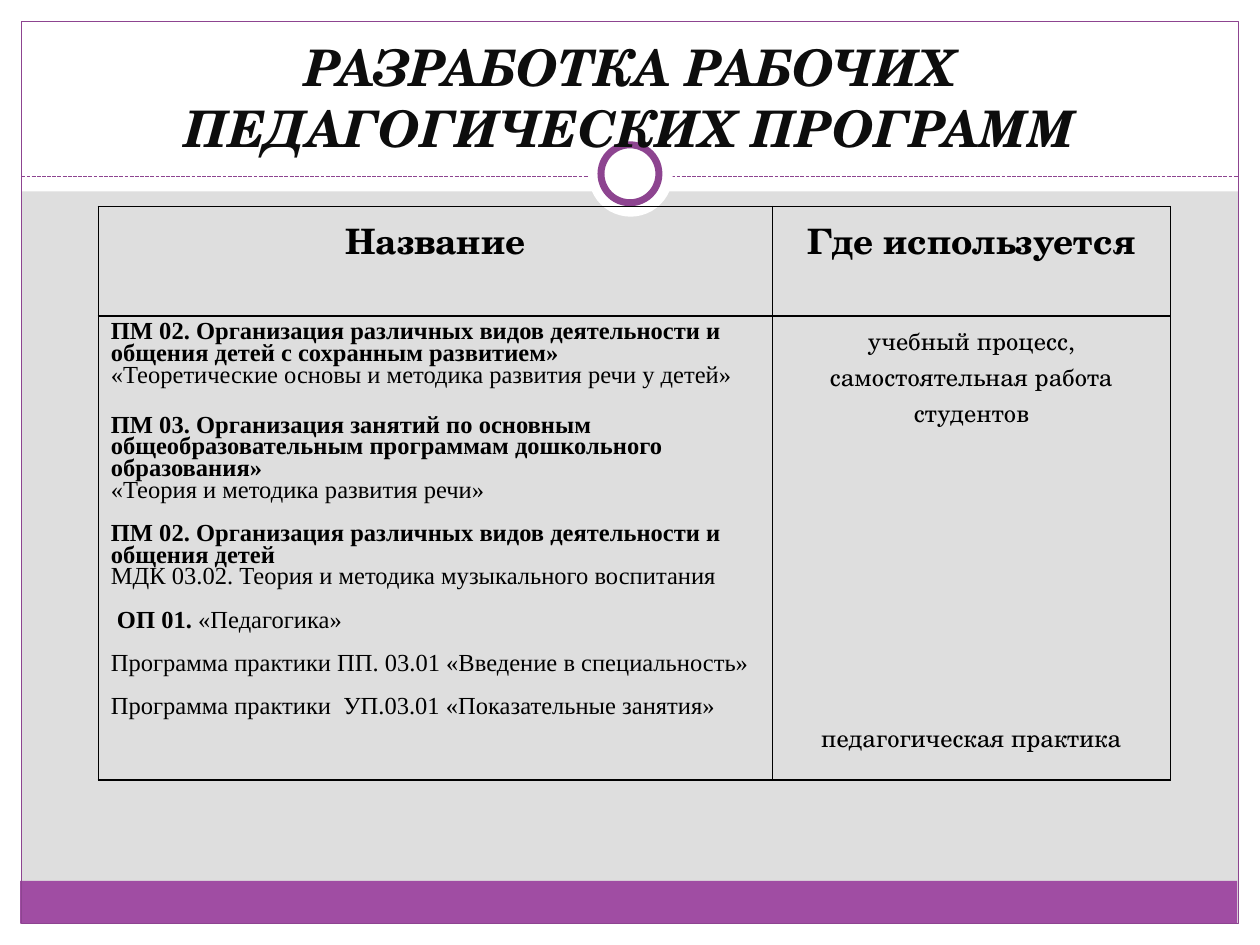
"""Build the slide on developing pedagogical work programmes."""
from lxml import etree
from pptx import Presentation, util as u
from pptx.dml.color import RGBColor
from pptx.enum import dml, shapes, text
from pptx.oxml.ns import qn

WHITE = RGBColor(0xFF, 0xFF, 0xFF)
BLACK = RGBColor(0, 0, 0)
NEAR_BLACK = RGBColor(0x0D, 0x0D, 0x0D)
GRAY = RGBColor(0xDE, 0xDE, 0xDE)
PURPLE = RGBColor(0xA0, 0x4D, 0xA3)
DARK_PURPLE = RGBColor(0x8D, 0x44, 0x90)
SERIF, TIMES = "TeX Gyre Schola", "Times New Roman"

presentation = Presentation()
presentation.slide_width, presentation.slide_height = u.Inches(10), u.Inches(7.5)
slide = presentation.slides.add_slide(presentation.slide_layouts[6])
slide.background.fill.solid()
slide.background.fill.fore_color.rgb = GRAY
COLUMN = presentation.slide_width / 100
ROW = presentation.slide_height / 100


def place(left, top, width, height):
    return [round(n * unit) for n, unit in zip((left, top, width, height), (COLUMN, ROW) * 2)]


def style(run, name, size, color, bold=False, italic=False):
    run.font.name, run.font.size = name, u.Pt(size)
    run.font.bold, run.font.italic = bold, italic
    run.font.color.rgb = color


RECTANGLE, OVAL = shapes.MSO_SHAPE.RECTANGLE, shapes.MSO_SHAPE.OVAL
decor = [
    (RECTANGLE, (0, 97.73, 100, 2.27), WHITE, 0),
    (RECTANGLE, (0, 0, 100, 20.27), WHITE, 0),
    (RECTANGLE, (0, 0, 1.7, 100), WHITE, 0),
    (RECTANGLE, (98.3, 0, 1.7, 100), WHITE, 0),
    (RECTANGLE, (1.6, 93.2, 96.6, 4.53), PURPLE, 0),
    (RECTANGLE, (1.7, 2.27, 96.6, 95.47), None, 0.75),
    ("divider", (1.7, 18.67, 98.3, 18.67), None, 0.75),
    (OVAL, (46.7, 14, 6.7, 8.93), WHITE, 0),
    (OVAL, (47.7, 15.33, 4.6, 6.13), WHITE, 4),
]
for kind, area, fill, line_width in decor:
    if kind == "divider":
        shape = slide.shapes.add_connector(shapes.MSO_CONNECTOR.STRAIGHT, *place(*area))
        etree.SubElement(shape._element.spPr, qn("a:effectLst"))
        shape.line.dash_style = dml.MSO_LINE.SQUARE_DOT
    else:
        shape = slide.shapes.add_shape(kind, *place(*area))
        shape.shadow.inherit = False
        if fill is None:
            shape.fill.background()
        else:
            shape.fill.solid()
            shape.fill.fore_color.rgb = fill
    if line_width:
        shape.line.color.rgb = DARK_PURPLE
        shape.line.width = u.Pt(line_width)
    else:
        shape.line.fill.background()

title = slide.shapes.add_textbox(*place(6.7, 7.33, 86.6, 9.33)).text_frame
title.word_wrap = True
title.vertical_anchor = text.MSO_ANCHOR.BOTTOM
title.margin_bottom = 0
title.text = "РАЗРАБОТКА РАБОЧИХ ПЕДАГОГИЧЕСКИХ ПРОГРАММ"
paragraph = title.paragraphs[0]
paragraph.alignment = text.PP_ALIGN.CENTER
paragraph.line_spacing = u.Pt(35)
style(paragraph.runs[0], SERIF, 28.8, NEAR_BLACK, True, True)

table = slide.shapes.add_table(2, 2, *place(7.8, 21.87, 85.1, 60.67)).table
table.first_row = table.horz_banding = False
for column, width in zip(table.columns, (53.5, 31.6)):
    column.width = round(width * COLUMN)
for row, height in zip(table.rows, (11.6, 49.07)):
    row.height = round(height * ROW)

programs = [
    (0, "ПМ 02. Организация различных видов деятельности и общения детей с сохранным развитием»", ""),
    (0, "", "«Теоретические основы и методика развития речи у детей»"),
    (16.1, "ПМ 03. Организация занятий по основным общеобразовательным программам "
           "дошкольного образования»", ""),
    (0, "", "«Теория и методика развития речи»"),
    (12.4, "ПМ 02. Организация различных видов деятельности и общения детей", ""),
    (0, "", "МДК 03.02. Теория и методика музыкального воспитания"),
    (12.4, " ОП 01.", " «Педагогика»"),
    (12.4, "", "Программа практики ПП. 03.01 «Введение в специальность»"),
    (12.4, "", "Программа практики  УП.03.01 «Показательные занятия»"),
]
uses = [
    (0, "", "учебный процесс,"),
    (0, "", "самостоятельная работа студентов"),
    (165, "", "педагогическая практика"),
]
CENTER, LEFT = text.PP_ALIGN.CENTER, text.PP_ALIGN.LEFT
contents = [
    ([(0, "Название", "")], SERIF, 20, CENTER, 1),
    ([(0, "Где используется", "")], SERIF, 20, CENTER, 1),
    (programs, TIMES, 14, LEFT, 0.8),
    (uses, SERIF, 14, CENTER, 1),
]
for cell, (entries, font, size, alignment, spacing) in zip(table.iter_cells(), contents):
    frame = cell.text_frame
    for index, (gap, strong, plain) in enumerate(entries):
        paragraph = frame.add_paragraph() if index else frame.paragraphs[0]
        paragraph.alignment = alignment
        paragraph.line_spacing = spacing
        if gap:
            paragraph.space_before = u.Pt(gap)
        for words, bold in ((strong, True), (plain, False)):
            if words:
                run = paragraph.add_run()
                run.text = words
                style(run, font, size, BLACK, bold)
    properties = cell._tc.get_or_add_tcPr()
    for side in ("lnL", "lnR", "lnT", "lnB"):
        border = etree.SubElement(properties, qn(f"a:{side}"), w=str(u.Pt(1)))
        solid = etree.SubElement(border, qn("a:solidFill"))
        etree.SubElement(solid, qn("a:srgbClr"), val=str(BLACK))
    cell.fill.background()

presentation.save("out.pptx")
